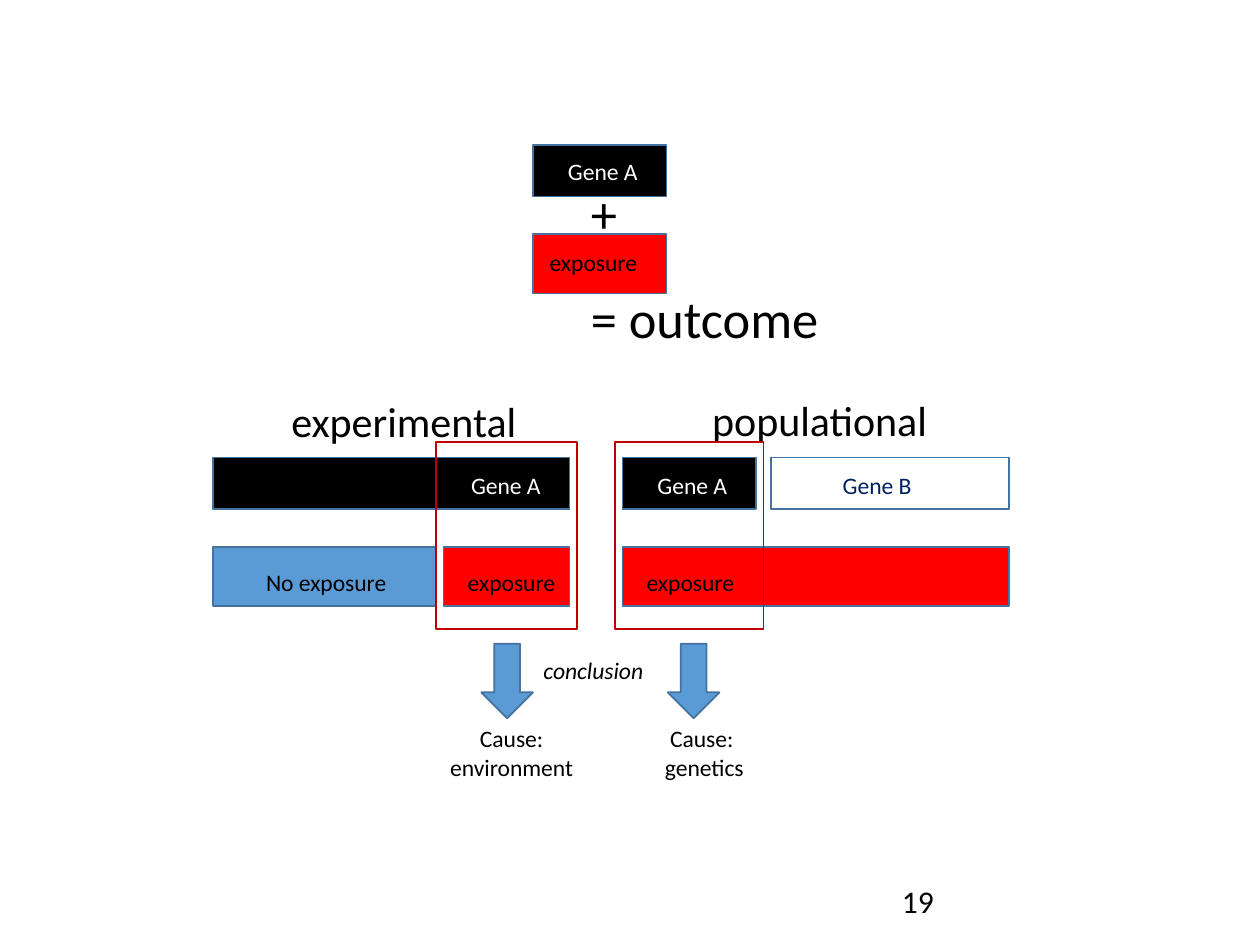
from dataclasses import dataclass

from pptx import Presentation
from pptx.dml.color import RGBColor
from pptx.enum.shapes import MSO_SHAPE
from pptx.enum.text import MSO_ANCHOR, PP_ALIGN
from pptx.util import Inches, Pt


@dataclass(frozen=True)
class Theme:
    font: str = "Calibri"
    black: str = "000000"
    white: str = "FFFFFF"
    red: str = "FF0000"
    blue: str = "5B9BD5"
    outline: str = "43739E"
    frame: str = "C00000"
    navy: str = "002060"
    label: float = 13.5
    number: float = 18
    heading: float = 24
    formula: float = 30


THEME = Theme()
GENE_HEIGHT, EXPOSURE_HEIGHT = 0.41, 0.47
GENE_TOP, EXPOSURE_TOP = 3.63, 4.34


def add_block(slide, left, top, width, height, fill=None,
              line=THEME.outline, kind=MSO_SHAPE.RECTANGLE):
    """Add an outlined shape; without a fill it is an open frame."""
    shape = slide.shapes.add_shape(
        kind, Inches(left), Inches(top), Inches(width), Inches(height))
    shape.shadow.inherit = False
    if fill:
        shape.fill.solid()
        shape.fill.fore_color.rgb = RGBColor.from_string(fill)
    else:
        shape.fill.background()
    shape.line.color.rgb = RGBColor.from_string(line)
    shape.line.width = Pt(1)


def add_text(slide, text, left, top, width, height, size=THEME.label,
             color=THEME.black, align=PP_ALIGN.CENTER, wrap=True, italic=None):
    """Add a text box with one paragraph for each line of text."""
    box = slide.shapes.add_textbox(
        Inches(left), Inches(top), Inches(width), Inches(height))
    frame_format = {"word_wrap": wrap, "vertical_anchor": MSO_ANCHOR.TOP}
    for name, value in frame_format.items():
        setattr(box.text_frame, name, value)
    box.text_frame.text = text
    font_format = {"name": THEME.font, "size": Pt(size), "italic": italic}
    for paragraph in box.text_frame.paragraphs:
        paragraph.alignment = align
        for run in paragraph.runs:
            for name, value in font_format.items():
                setattr(run.font, name, value)
            run.font.color.rgb = RGBColor.from_string(color)


def add_gene_label(slide, text, left, top, color=THEME.white):
    add_text(slide, text, left, top, 0.77, 0.33, color=color,
             align=PP_ALIGN.LEFT, wrap=False)


def add_exposure_label(slide, text, left, top, width=1.12, italic=None):
    add_text(slide, text, left, top, width, 0.33, italic=italic)


def add_bars(slide):
    # Gene bars: left, top, width, fill
    for left, top, width, fill in (
            (4.23, 1.15, 1.06, THEME.black),
            (1.69, GENE_TOP, 2.83, THEME.black),
            (4.94, GENE_TOP, 1.06, THEME.black),
            (6.12, GENE_TOP, 1.89, THEME.white)):
        add_block(slide, left, top, width, GENE_HEIGHT, fill)
    # Exposure bars
    for left, top, width, fill in (
            (4.23, 1.86, 1.06, THEME.red),
            (1.69, EXPOSURE_TOP, 1.77, THEME.blue),
            (3.52, EXPOSURE_TOP, 1, THEME.red),
            (4.94, EXPOSURE_TOP, 3.07, THEME.red)):
        add_block(slide, left, top, width, EXPOSURE_HEIGHT, fill)


def add_formula_and_headings(slide):
    add_text(slide, "+", 4.59, 1.39, 0.35, 0.61, THEME.formula)
    add_text(slide, "= outcome", 4.59, 2.22, 3.25, 0.61, THEME.formula,
             align=PP_ALIGN.LEFT)
    add_text(slide, "experimental", 2.11, 3.09, 2.19, 0.5, THEME.heading)
    add_text(slide, "populational", 5.53, 3.08, 1.95, 0.5, THEME.heading)


def add_conclusions(slide):
    # Each study: frame left and width, arrow left, cause left and text
    for frame_left, frame_width, arrow_left, cause_left, cause in (
            (3.46, 1.12, 3.82, 3.35, "Cause: environment"),
            (4.88, 1.18, 5.3, 4.88, "Cause: \ngenetics")):
        add_block(slide, frame_left, 3.51, frame_width, 1.48, line=THEME.frame)
        add_block(slide, arrow_left, 5.11, 0.41, 0.59, THEME.blue,
                  kind=MSO_SHAPE.DOWN_ARROW)
        add_text(slide, cause, cause_left, 5.7, 1.42, 0.56)
    add_exposure_label(slide, "conclusion ", 4.17, 5.16, italic=True)


def add_labels(slide):
    for left, top in ((4.41, 1.2), (3.64, 3.69), (5.12, 3.69)):
        add_gene_label(slide, "Gene A", left, top)
    add_gene_label(slide, "Gene B", 6.59, 3.69, THEME.navy)
    for left, top in ((4.17, 1.92), (3.52, 4.46), (4.94, 4.46)):
        add_exposure_label(slide, "exposure ", left, top)
    add_exposure_label(slide, "No exposure ", 1.87, 4.46, 1.48)


def main():
    presentation = Presentation()
    presentation.slide_width = Inches(10)
    presentation.slide_height = Inches(7.5)
    slide = presentation.slides.add_slide(presentation.slide_layouts[6])

    add_bars(slide)
    add_formula_and_headings(slide)
    add_conclusions(slide)
    add_labels(slide)
    # Slide number
    add_text(slide, "19", 7.06, 6.95, 2.25, 0.4, THEME.number,
             align=PP_ALIGN.LEFT)

    presentation.save("out.pptx")


if __name__ == "__main__":
    main()
